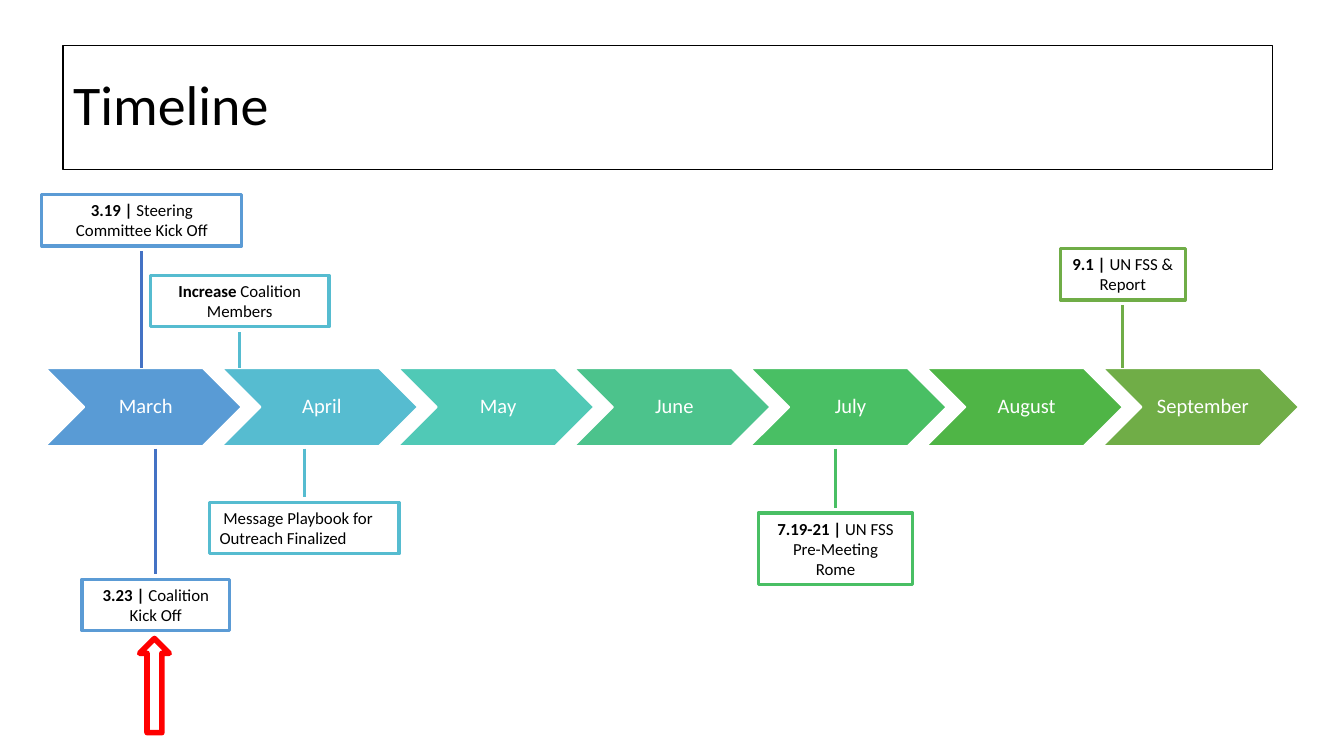
from lxml.etree import SubElement
from pptx import Presentation
from pptx.dml.color import RGBColor
from pptx.enum.shapes import MSO_CONNECTOR as Connector, MSO_SHAPE as Preset
from pptx.enum.text import MSO_ANCHOR as Anchor, MSO_AUTO_SIZE as AutoSize, PP_ALIGN as Align
from pptx.oxml.ns import qn
from pptx.util import Cm, Pt

BLACK = RGBColor(0x00, 0x00, 0x00)
WHITE = RGBColor(0xFF, 0xFF, 0xFF)
RED = RGBColor(0xFF, 0x00, 0x00)
BLUE = RGBColor(0x5B, 0x9B, 0xD5)
DARK_BLUE = RGBColor(0x44, 0x72, 0xC4)
MARCH_BLUE = RGBColor(0x59, 0x9B, 0xD5)
CYAN = RGBColor(0x56, 0xBC, 0xD0)
TEAL = RGBColor(0x50, 0xC9, 0xB6)
SEA_GREEN = RGBColor(0x4C, 0xC3, 0x8C)
GREEN = RGBColor(0x49, 0xBF, 0x64)
LEAF_GREEN = RGBColor(0x4F, 0xB5, 0x46)
OLIVE = RGBColor(0x70, 0xAD, 0x47)

FONT = "Calibri"
BAND = (0.86, 6.96, 3.71, 1.47)
MONTH_STEP = 3.33
STEM_GAP = 0.1

BOX_FRAME = {
    "margin_left": Cm(0.19), "margin_right": Cm(0.19),
    "margin_top": Cm(0.1), "margin_bottom": Cm(0.1), "word_wrap": True,
}
MONTH_FRAME = {
    "margin_left": Cm(0.12), "margin_right": Cm(0.04),
    "margin_top": Cm(0.04), "margin_bottom": Cm(0.04),
    "word_wrap": True, "vertical_anchor": Anchor.MIDDLE,
}

MONTHS = [
    ("March", MARCH_BLUE), ("April", CYAN), ("May", TEAL), ("June", SEA_GREEN),
    ("July", GREEN), ("August", LEAF_GREEN), ("September", OLIVE),
]

EVENTS = [
    ((0.79, 3.68, 3.78, 0.97), BLUE, DARK_BLUE, Align.CENTER,
     "3.19 | ", ["Steering Committee Kick Off"]),
    ((1.55, 10.95, 2.79, 0.97), BLUE, DARK_BLUE, Align.CENTER,
     "3.23 | ", ["Coalition Kick Off"]),
    ((2.84, 5.21, 3.38, 0.97), CYAN, CYAN, Align.CENTER,
     "Increase ", ["Coalition Members"]),
    ((3.96, 9.5, 3.58, 0.97), CYAN, CYAN, Align.LEFT,
     " ", ["Message Playbook for Outreach Finalized"]),
    ((14.33, 9.7, 2.92, 1.35), GREEN, GREEN, Align.CENTER,
     "7.19-21 | ", ["UN FSS Pre-Meeting", "Rome"]),
    ((20.04, 4.7, 2.36, 0.97), OLIVE, OLIVE, Align.CENTER,
     "9.1 | ", ["UN FSS & Report"]),
]


def set_attributes(target, values):
    for name, value in values.items():
        setattr(target, name, value)


def add_run(paragraph, text, size, color, bold=False):
    run = paragraph.add_run()
    run.text = text
    set_attributes(run.font, {"name": FONT, "size": Pt(size), "bold": bold})
    run.font.color.rgb = color


def style_line(line, color, width):
    line.color.rgb = color
    line.width = Pt(width)


def add_shape(shapes, preset, box, fill, line, width):
    shape = shapes.add_shape(preset, *map(Cm, box))
    shape.shadow.inherit = False
    if fill is None:
        shape.fill.background()
    else:
        shape.fill.solid()
        shape.fill.fore_color.rgb = fill
    style_line(shape.line, line, width)
    return shape


def place_title(slide, box):
    title = slide.shapes.title
    set_attributes(title, dict(zip(("left", "top", "width", "height"), map(Cm, box))))
    style_line(title.line, BLACK, 0.75)
    set_attributes(title.text_frame, BOX_FRAME | {"vertical_anchor": Anchor.MIDDLE})
    paragraph = title.text_frame.paragraphs[0]
    set_attributes(paragraph, {"alignment": Align.LEFT, "line_spacing": 0.9})
    add_run(paragraph, "Timeline", 30, BLACK)


def add_month_band(slide, first_box):
    left, top, width, height = first_box
    group = slide.shapes.add_group_shape()
    for index, (month, color) in enumerate(MONTHS):
        box = (left + index * MONTH_STEP, top, width, height)
        chevron = add_shape(group.shapes, Preset.CHEVRON, box, color, WHITE, 1)
        set_attributes(chevron.text_frame, MONTH_FRAME)
        paragraph = chevron.text_frame.paragraphs[0]
        set_attributes(paragraph, {"alignment": Align.CENTER, "line_spacing": 0.9})
        add_run(paragraph, month, 11, WHITE)


def add_stem(slide, box, color):
    left, top, width, height = box
    band_top, band_height = BAND[1], BAND[3]
    center = left + width / 2
    if top < band_top:
        start, end = top + height + STEM_GAP, band_top
    else:
        start, end = band_top + band_height + 0.05, top - STEM_GAP
    stem = slide.shapes.add_connector(
        Connector.STRAIGHT, Cm(center), Cm(start), Cm(center), Cm(end))
    style_line(stem.line, color, 1.75)
    SubElement(stem.element.spPr, qn("a:effectLst"))


def add_event(slide, box, color, stem_color, alignment, lead, lines):
    card = add_shape(slide.shapes, Preset.RECTANGLE, box, None, color, 1.75)
    frame = card.text_frame
    set_attributes(frame, BOX_FRAME | {
        "vertical_anchor": Anchor.TOP, "auto_size": AutoSize.SHAPE_TO_FIT_TEXT})
    for index, text in enumerate(lines):
        paragraph = frame.add_paragraph() if index else frame.paragraphs[0]
        paragraph.alignment = alignment
        if index == 0:
            add_run(paragraph, lead, 9, BLACK, True)
        add_run(paragraph, text, 9, BLACK)
    add_stem(slide, box, stem_color)


def add_today_arrow(slide, box):
    add_shape(slide.shapes, Preset.UP_ARROW, box, WHITE, RED, 3)


def main():
    presentation = Presentation()
    presentation.slide_width = Cm(25.4)
    presentation.slide_height = Cm(14.29)
    slide = presentation.slides.add_slide(presentation.slide_layouts[5])
    place_title(slide, (1.19, 0.86, 22.86, 2.34))
    add_month_band(slide, BAND)
    for event in EVENTS:
        add_event(slide, *event)
    add_today_arrow(slide, (2.64, 12.07, 0.56, 1.78))
    presentation.save("out.pptx")


if __name__ == "__main__":
    main()
